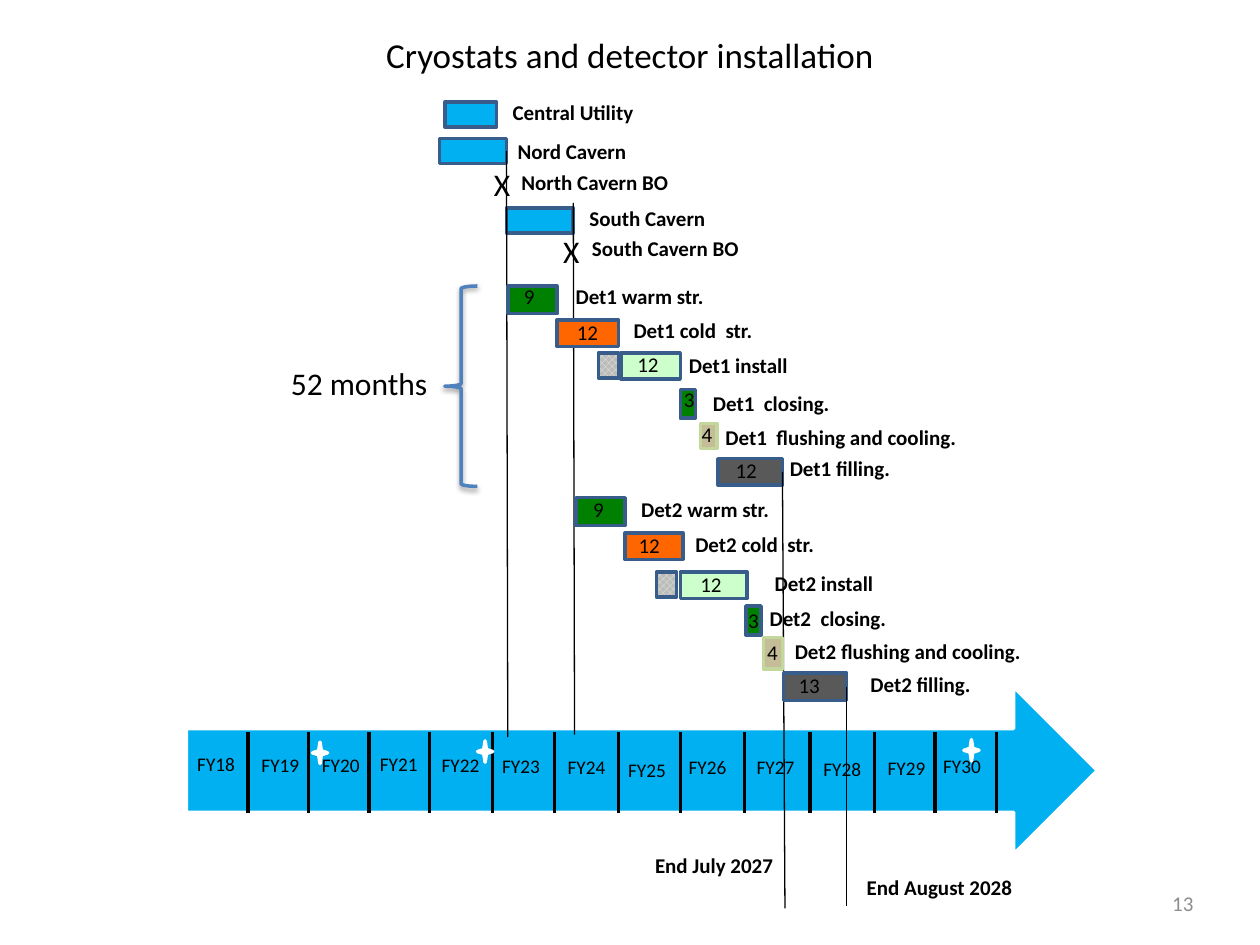
from lxml import etree
from pptx import Presentation
from pptx.dml.color import RGBColor
from pptx.enum.dml import MSO_PATTERN
from pptx.enum.shapes import MSO_CONNECTOR, MSO_SHAPE
from pptx.enum.text import MSO_ANCHOR, MSO_AUTO_SIZE, PP_ALIGN
from pptx.oxml import parse_xml
from pptx.oxml.ns import qn
from pptx.util import Cm, Pt

RECT, ARROW = MSO_SHAPE.RECTANGLE, MSO_SHAPE.RIGHT_ARROW
STAR, BRACE = MSO_SHAPE.STAR_4_POINT, MSO_SHAPE.LEFT_BRACE
STRAIGHT = MSO_CONNECTOR.STRAIGHT
CHECKER = MSO_PATTERN.LARGE_CHECKER_BOARD
TOP, MIDDLE = MSO_ANCHOR.TOP, MSO_ANCHOR.MIDDLE
LEFT, CENTER, RIGHT = PP_ALIGN.LEFT, PP_ALIGN.CENTER, PP_ALIGN.RIGHT
GROW = MSO_AUTO_SIZE.SHAPE_TO_FIT_TEXT
RIGHT_SIDE = 3

FONT = "Calibri"
SKY, NAVY, WHITE, BLACK = "00B0F0", "385D8A", "FFFFFF", "000000"
PHASE_COLOURS = [("008000", NAVY), ("FF6600", NAVY), ("CCFFCC", NAVY),
                 ("008000", NAVY), ("C4BD97", "C3D69B"), ("595959", NAVY)]

# Each task: label, months, bar box, label offset, months offset (from the bar's corner)
CAVERNS = [
    ("Central Utility", (0.04, 0, 0.41, 0.2), (0.44, -0.07)),
    ("Nord Cavern", (0, 0.29, 0.53, 0.2), (0.52, -0.05)),
    ("South Cavern", (0.53, 0.84, 0.53, 0.2), (0.56, -0.07)),
]
BREAKOUTS = [("North Cavern BO", 0.43, 0.45, 0.12, 0.04),
             ("South Cavern BO", 0.98, 0.98, 0.13, 0.03)]
DETECTOR_1 = [
    ("Det1 warm str.", "9", (0, 0, 0.39, 0.22), (0.44, -0.07), (0.03, -0.07)),
    ("Det1 cold  str.", "12", (0.39, 0.27, 0.49, 0.21), (0.51, -0.07), (0.06, -0.05)),
    ("Det1 install", "12", (0.9, 0.53, 0.47, 0.21), (0.44, -0.05), (0.03, -0.06)),
    ("Det1  closing.", "3", (1.37, 0.82, 0.12, 0.23), (0.16, -0.04), (-0.07, -0.07)),
    ("Det1  flushing and cooling.", "4", (1.53, 1.09, 0.13, 0.2), (0.1, -0.04), (-0.09, -0.06)),
    ("Det1 filling.", "12", (1.67, 1.37, 0.51, 0.21), (0.47, -0.07), (0.04, -0.06)),
]
DETECTOR_2 = [
    ("Det2 warm str.", "9", (0, 0, 0.39, 0.22), (0.42, -0.06), (0.04, -0.06)),
    ("Det2 cold  str.", "12", (0.39, 0.28, 0.46, 0.21), (0.46, -0.06), (0.01, -0.05)),
    ("Det2 install", "12", (0.83, 0.59, 0.53, 0.21), (0.65, -0.06), (0.06, -0.05)),
    ("Det2  closing.", "3", (1.35, 0.86, 0.12, 0.23), (0.09, -0.05), (-0.08, -0.04)),
    ("Det2 flushing and cooling.", "4", (1.49, 1.11, 0.15, 0.25), (0.15, -0.04), (-0.07, -0.03)),
    ("Det2 filling.", "13", (1.65, 1.39, 0.5, 0.22), (0.59, -0.06), (0.02, -0.05)),
]
# Left, top, height and top inset of each fiscal year, from FY18
YEARS = [(0.04, 0.16, 0.67, 0.35), (0.55, 0.17, 0.67, 0.35), (1.03, 0.17, 0.67, 0.35),
         (1.49, 0.16, 0.67, 0.35), (1.98, 0.17, 0.67, 0.35), (2.46, 0.18, 0.67, 0.35),
         (2.98, 0.19, 0.67, 0.35), (3.46, 0.21, 0.67, 0.35), (3.94, 0.19, 0.67, 0.35),
         (4.48, 0.19, 0.67, 0.35), (5.01, 0.22, 0.64, 0.35), (5.52, 0.21, 0.64, 0.35),
         (5.96, 0.31, 0.64, 0.12)]
DIVIDERS = [0.49, 0.97, 1.45, 1.93, 2.43, 2.92, 3.43, 3.92, 4.43, 4.95, 5.46, 5.94, 6.43]
STARS = [(1, 0.44), (2.31, 0.43), (6.17, 0.42)]


def length(inches):
    return Cm(inches * 2.54)


def colour(hex_string):
    return RGBColor.from_string(hex_string)


def add_text(page, text, left, top, width, height=0.3, size=12, bold=False, hue=BLACK,
             align=LEFT, anchor=TOP, insets=(0.1, 0.05), top_inset=None, grow=True, wrap=True):
    box = page.shapes.add_textbox(*map(length, (left, top, width, height)))
    frame = box.text_frame
    frame.text = text
    frame.word_wrap = wrap
    frame.vertical_anchor = anchor
    if grow:
        frame.auto_size = GROW
    side, edge = insets
    frame.margin_left = frame.margin_right = length(side)
    frame.margin_top = length(edge if top_inset is None else top_inset)
    frame.margin_bottom = length(edge)
    para = frame.paragraphs[0]
    para.alignment = align
    font = para.runs[0].font
    font.name, font.size, font.bold = FONT, Pt(size), bold
    font.color.rgb = colour(hue)


def add_shape(page, kind, box, fill, line):
    shape = page.shapes.add_shape(kind, *map(length, box))
    shape.shadow.inherit = False
    if fill:
        shape.fill.solid()
        shape.fill.fore_color.rgb = colour(fill)
    else:
        shape.fill.background()
    shape.line.color.rgb = colour(line)
    shape.line.width = Pt(2)
    return shape


def add_line(page, start, end, width, bar=None):
    """Draw a black line, starting from the right side of a bar if one is given."""
    line = page.shapes.add_connector(STRAIGHT, *map(length, (*start, *end)))
    line.line.color.rgb = colour(BLACK)
    line.line.width = Pt(width)
    etree.SubElement(line._element.spPr, qn("a:effectLst"))
    if bar is not None:
        line.begin_connect(bar, RIGHT_SIDE)


def add_timeline(page, left, top):
    add_shape(page, ARROW, (left, top, 7.23, 1.33), SKY, WHITE)
    for x in DIVIDERS:
        add_line(page, (left + x, top + 0.36), (left + x, top + 1), 2)
    for x, y in STARS:
        add_shape(page, STAR, (left + x, top + y, 0.12, 0.17), WHITE, WHITE)
    for year, (x, y, height, inset) in enumerate(YEARS, start=18):
        add_text(page, f"FY{year}", left + x, top + y, 0.39, height, 11, align=CENTER,
                 anchor=MIDDLE, insets=(0, 0.12), top_inset=inset, grow=False)


def add_task(page, left, top, label, box, label_offset, fill, line):
    x, y, width, height = box
    bar = add_shape(page, RECT, (left + x, top + y, width, height), fill, line)
    dx, dy = label_offset
    add_text(page, label, left + x + dx, top + y + dy, 2.5, bold=True)
    return bar


def add_caverns(page, left, top):
    bars = [add_task(page, left, top, label, box, offset, SKY, NAVY)
            for label, box, offset in CAVERNS]
    for label, x, y, dx, dy in BREAKOUTS:
        add_text(page, "X", left + x, top + y, 0.09, 0.4, 18, insets=(0, 0.05), wrap=False)
        add_text(page, label, left + x + dx, top + y + dy, 2.04, bold=True)
    add_line(page, (4.02, 1.2), (4.03, 5.85), 0.75, bars[1])
    add_line(page, (4.55, 1.61), (4.56, 5.83), 0.75)


def add_detector(page, left, top, tasks, preparation):
    """Draw the six phases and the checkered preparation bar; return the last bar."""
    for (label, months, box, label_offset, (dx, dy)), (fill, line) in zip(tasks, PHASE_COLOURS):
        bar = add_task(page, left, top, label, box, label_offset, fill, line)
        add_text(page, months, left + box[0] + dx, top + box[1] + dy, 0.44)
    x, y = preparation
    checkered = add_shape(page, RECT, (left + x, top + y, 0.16, 0.2), WHITE, NAVY)
    checkered.fill.patterned()
    checkered.fill.pattern = CHECKER
    checkered.fill.fore_color.rgb = colour("EBF1DE")
    checkered.fill.back_color.rgb = colour("BCBCBC")
    return bar


def add_duration(page, left, top):
    add_text(page, "52 months", left, top + 0.57, 1.51, 0.4, 18)
    brace = add_shape(page, BRACE, (left + 1.32, top, 0.26, 1.59), None, "4F81BD")
    brace._element.spPr.find(qn("a:effectLst")).append(parse_xml(
        '<a:outerShdw xmlns:a="http://schemas.openxmlformats.org/drawingml/2006/main" '
        'blurRad="39370" dist="20320" dir="5400000" rotWithShape="0">'
        '<a:srgbClr val="000000"><a:alpha val="38000"/></a:srgbClr></a:outerShdw>'))


def main():
    deck = Presentation()
    deck.slide_width, deck.slide_height = length(10), length(7.5)
    page = deck.slides.add_slide(deck.slide_layouts[6])
    add_text(page, "Cryostats and detector installation", 1.25, 0.12, 7.5, 0.62, 20,
             align=CENTER, anchor=MIDDLE, grow=False)
    add_timeline(page, 1.48, 5.45)
    add_caverns(page, 3.49, 0.81)
    filling_1 = add_detector(page, 4.03, 2.27, DETECTOR_1, (0.72, 0.53))
    add_line(page, (6.21, 3.75), (6.23, 7.21), 0.75, filling_1)
    filling_2 = add_detector(page, 4.57, 3.95, DETECTOR_2, (0.64, 0.59))
    add_line(page, (6.72, 5.45), (6.72, 7.19), 0.75, filling_2)
    add_duration(page, 2.21, 2.27)
    add_text(page, "End July 2027", 5.1, 6.72, 1.62, bold=True)
    add_text(page, "End August 2028", 6.78, 6.89, 1.62, bold=True)
    add_text(page, "13", 7.32, 6.97, 2.25, 0.4, hue="8C8C8C", align=RIGHT,
             anchor=MIDDLE, grow=False)
    deck.save("out.pptx")


if __name__ == "__main__":
    main()
